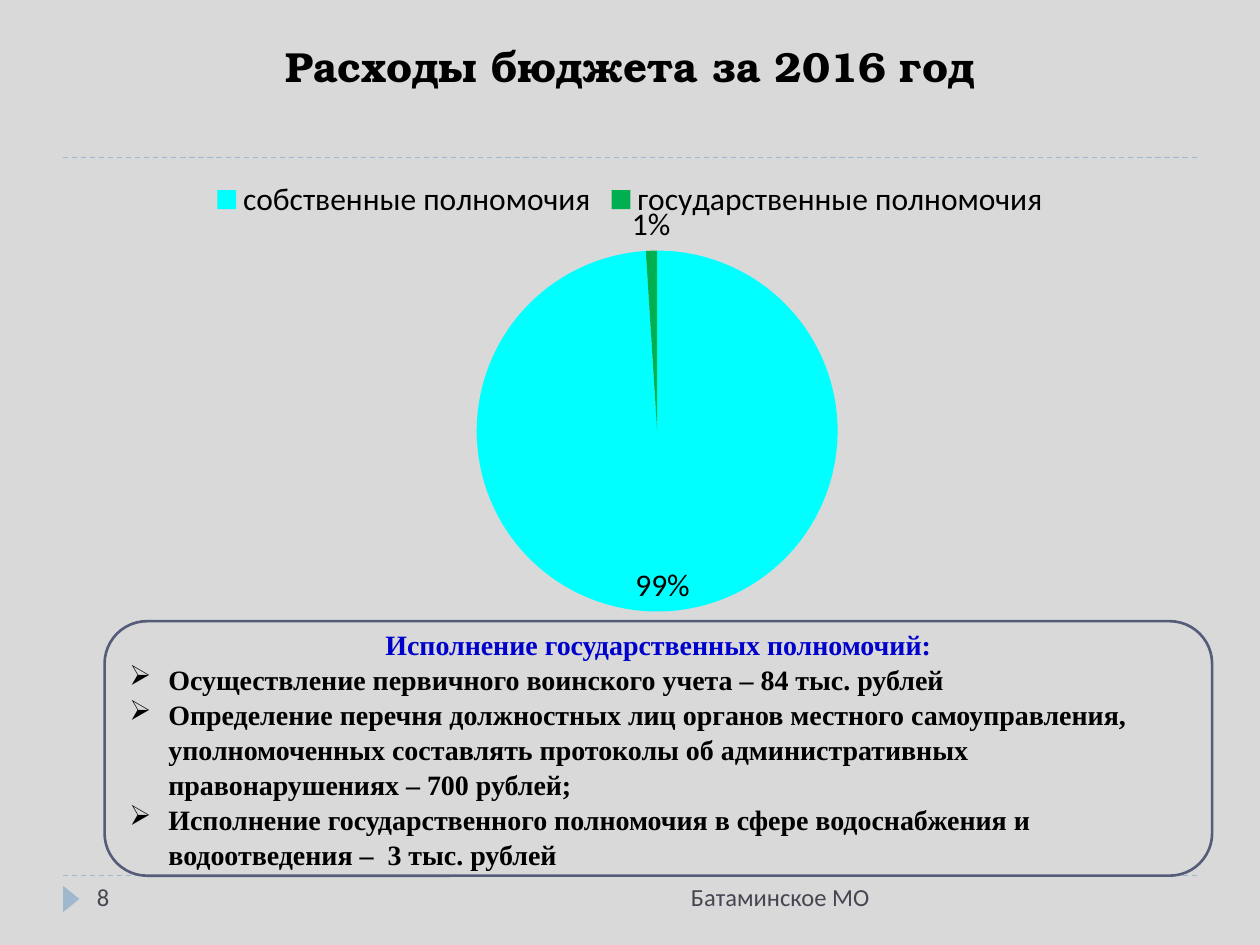
from lxml.etree import SubElement
from pptx import Presentation
from pptx.chart.data import CategoryChartData
from pptx.dml.color import RGBColor
from pptx.enum.chart import XL_CHART_TYPE, XL_LABEL_POSITION, XL_LEGEND_POSITION
from pptx.enum.dml import MSO_LINE
from pptx.enum.shapes import MSO_CONNECTOR, MSO_SHAPE
from pptx.enum.text import MSO_ANCHOR, PP_ALIGN
from pptx.oxml import parse_xml
from pptx.oxml.ns import nsdecls, qn
from pptx.util import Inches, Pt

COLORS = {
    "back": "D9D9D9", "ink": "000000", "head": "0000CC", "foot": "464653",
    "rule": "9FB8CD", "frame": "545C79", "own": "00FFFF", "state": "00B050",
}
COLS, ROWS = 100, 75
TASKS = [
    "Осуществление первичного воинского учета – 84 тыс. рублей",
    "Определение перечня должностных лиц органов местного самоуправления, "
    "уполномоченных составлять протоколы об административных правонарушениях – 700 рублей;",
    "Исполнение государственного полномочия в сфере водоснабжения и водоотведения –  3 тыс. рублей",
]
SHARES = [("собственные полномочия", 99, "own", XL_LABEL_POSITION.INSIDE_END),
          ("государственные полномочия", 1, "state", XL_LABEL_POSITION.OUTSIDE_END)]


def color(name):
    return RGBColor.from_string(COLORS[name])


class Page:
    def __init__(self, deck):
        self.wide, self.high = deck.slide_width, deck.slide_height
        self.slide = deck.slides.add_slide(deck.slide_layouts[6])
        self.shapes = self.slide.shapes
        fill = self.slide.background.fill
        fill.solid()
        fill.fore_color.rgb = color("back")

    def place(self, col, row, cols, rows):
        return (int(self.wide * col / COLS), int(self.high * row / ROWS),
                int(self.wide * cols / COLS), int(self.high * rows / ROWS))

    def style(self, par, size, face, ink, bold=False, align=PP_ALIGN.LEFT):
        par.alignment = align
        font = par.font
        font.size, font.name, font.bold = Pt(size), face, bold
        font.color.rgb = color(ink)

    def rule(self, row):
        left, top, width, _ = self.place(5, row, 90, 0)
        line = self.shapes.add_connector(MSO_CONNECTOR.STRAIGHT, left, top, left + width, top)
        line.line.color.rgb = color("rule")
        line.line.width = Pt(0.75)
        line.line.dash_style = MSO_LINE.DASH
        SubElement(line._element.spPr, qn("a:effectLst"))

    def marker(self, *spot):
        mark = self.shapes.add_shape(MSO_SHAPE.ISOSCELES_TRIANGLE, *self.place(*spot))
        mark.shadow.inherit = False
        mark.rotation = 90
        mark.fill.solid()
        mark.fill.fore_color.rgb = color("rule")
        mark.line.fill.background()

    def text(self, spot, words, size, face, ink, bold=False,
             align=PP_ALIGN.LEFT, anchor=MSO_ANCHOR.TOP):
        frame = self.shapes.add_textbox(*self.place(*spot)).text_frame
        frame.word_wrap = True
        frame.vertical_anchor = anchor
        frame.text = words
        self.style(frame.paragraphs[0], size, face, ink, bold, align)

    def pie(self, spot, shares):
        data = CategoryChartData()
        data.categories = [share[0] for share in shares]
        data.add_series("Series 1", [share[1] for share in shares])
        chart = self.shapes.add_chart(XL_CHART_TYPE.PIE, *self.place(*spot), data).chart
        chart.has_title = False
        chart.font.size, chart.font.name = Pt(18), "Calibri"
        chart.font.color.rgb = color("ink")
        chart.has_legend = True
        chart.legend.position = XL_LEGEND_POSITION.TOP
        chart.legend.include_in_layout = False
        plot = chart.plots[0]
        plot.vary_by_categories = True
        points = plot.series[0].points
        for index, (_, _, tint, side) in enumerate(shares):
            fill = points[index].format.fill
            fill.solid()
            fill.fore_color.rgb = color(tint)
            points[index].data_label.position = side
        root = chart._chartSpace
        for tag, flag in (("showVal", "0"), ("showPercent", "1"), ("showLeaderLines", "0")):
            for node in root.iter(qn("c:" + tag)):
                node.set("val", flag)
        area = root.find(".//" + qn("c:plotArea"))
        for old in area.findall(qn("c:layout")):
            area.remove(old)
        sizes = (("x", 0.095), ("y", 0.163), ("w", 0.858), ("h", 0.687))
        parts = '<c:layoutTarget val="inner"/><c:xMode val="edge"/><c:yMode val="edge"/>'
        parts += "".join(f'<c:{key} val="{val}"/>' for key, val in sizes)
        area.insert(0, parse_xml(
            f'<c:layout {nsdecls("c")}><c:manualLayout>{parts}</c:manualLayout></c:layout>'))

    def panel(self, spot, head, items):
        box = self.shapes.add_shape(MSO_SHAPE.ROUNDED_RECTANGLE, *self.place(*spot))
        box.shadow.inherit = False
        box.fill.background()
        box.line.color.rgb = color("frame")
        box.line.width = Pt(1.5)
        frame = box.text_frame
        frame.word_wrap = True
        frame.vertical_anchor = MSO_ANCHOR.MIDDLE
        frame.text = "\n".join([head, *items])
        first, *rest = frame.paragraphs
        self.style(first, 16, "Times New Roman", "head", True, PP_ALIGN.CENTER)
        for par in rest:
            self.style(par, 16, "Times New Roman", "ink", True)
            props = par._p.get_or_add_pPr()
            props.set("marL", str(Inches(0.31)))
            props.set("indent", str(-Inches(0.31)))
            props.insert(0, parse_xml(f'<a:buChar {nsdecls("a")} char="➢"/>'))
        for par in frame.paragraphs:
            par.line_spacing = 1.04


def main():
    deck = Presentation()
    deck.slide_width, deck.slide_height = Inches(10), Inches(7.5)
    page = Page(deck)
    for row in (69.5, 12.5):
        page.rule(row)
    page.marker(4.6, 70.7, 2.1, 1.3)
    page.text((5, 0, 90, 7.7), "Расходы бюджета за 2016 год", 24, "TeX Gyre Bonum", "ink",
              True, PP_ALIGN.CENTER, MSO_ANCHOR.BOTTOM)
    page.text((6.7, 69.5, 21.7, 4), "8", 14, "Calibri", "foot")
    page.pie((5, 13.1, 90, 41.7), SHARES)
    page.text((31.7, 69.5, 38.3, 4), "Батаминское МО", 14, "Calibri", "foot",
              align=PP_ALIGN.RIGHT)
    page.panel((8.3, 49.3, 87.9, 20.2), "Исполнение государственных полномочий:", TASKS)
    deck.save("out.pptx")


if __name__ == "__main__":
    main()
